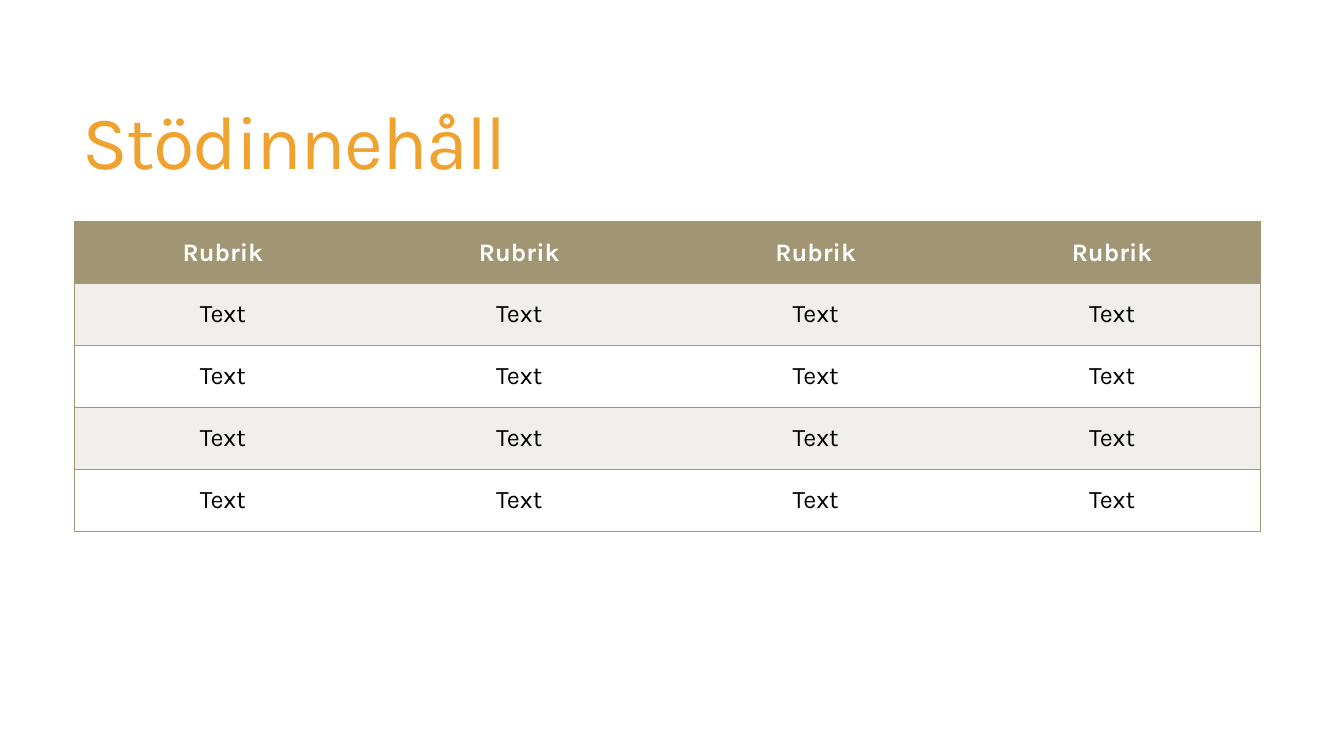
from dataclasses import dataclass

from lxml import etree
from pptx import Presentation
from pptx import util as u
from pptx.dml.color import RGBColor
from pptx.enum import text
from pptx.oxml import ns

ORANGE = RGBColor(0xF0, 0xA2, 0x2E)
KHAKI = RGBColor(0xA1, 0x95, 0x74)
PALE = RGBColor(0xF0, 0xEF, 0xEB)
WHITE = RGBColor(0xFF, 0xFF, 0xFF)
BLACK = RGBColor(0x00, 0x00, 0x00)
FONT = "Karla"
COLUMN_COUNT = 4


@dataclass(frozen=True)
class RowStyle:
    label: str
    fill: RGBColor
    color: RGBColor
    bold: bool = False


HEADING = RowStyle("Rubrik", KHAKI, WHITE, True)
SHADED = RowStyle("Text", PALE, BLACK)
PLAIN = RowStyle("Text", WHITE, BLACK)
ROWS = [HEADING, SHADED, PLAIN, SHADED, PLAIN]


def style_text(paragraph, size: float, color: RGBColor, bold: bool = False) -> None:
    for run in paragraph.runs:
        run.font.name = FONT
        run.font.size = u.Pt(size)
        run.font.color.rgb = color
        run.font.bold = bold


def add_border(cell, side: str, visible: bool) -> None:
    properties = cell._tc.get_or_add_tcPr()
    line = etree.SubElement(properties, ns.qn(f"a:ln{side}"), w=str(u.Pt(1)))
    if visible:
        fill = etree.SubElement(line, ns.qn("a:solidFill"))
        etree.SubElement(fill, ns.qn("a:srgbClr"), val=str(KHAKI))
    else:
        etree.SubElement(line, ns.qn("a:noFill"))


def fill_cell(cell, style: RowStyle, column: int) -> None:
    add_border(cell, "L", column == 0)
    add_border(cell, "R", column == COLUMN_COUNT - 1)
    add_border(cell, "T", True)
    add_border(cell, "B", True)
    cell.fill.solid()
    cell.fill.fore_color.rgb = style.fill
    cell.vertical_anchor = text.MSO_ANCHOR.MIDDLE
    cell.text_frame.text = style.label
    paragraph = cell.text_frame.paragraphs[0]
    paragraph.alignment = text.PP_ALIGN.CENTER
    style_text(paragraph, 18, style.color, style.bold)


def add_title(slide) -> None:
    title = slide.shapes.add_textbox(
        u.Inches(0.72), u.Inches(0.55), u.Inches(11.78), u.Inches(1.81)
    ).text_frame
    title.word_wrap = True
    title.vertical_anchor = text.MSO_ANCHOR.MIDDLE
    title.text = "Stödinnehåll"
    heading = title.paragraphs[0]
    heading.line_spacing = 0.85
    style_text(heading, 54, ORANGE)
    heading.runs[0].font._element.set("spc", "-120")


def add_content_table(slide) -> None:
    table = slide.shapes.add_table(
        len(ROWS), COLUMN_COUNT,
        u.Inches(0.74), u.Inches(2.2), u.Inches(11.76), u.Inches(3.07),
    ).table
    for row, style in enumerate(ROWS):
        for column in range(COLUMN_COUNT):
            fill_cell(table.cell(row, column), style, column)


def main() -> None:
    deck = Presentation()
    deck.slide_width = u.Inches(13.33)
    deck.slide_height = u.Inches(7.5)
    slide = deck.slides.add_slide(deck.slide_layouts[6])
    add_title(slide)
    add_content_table(slide)
    deck.save("out.pptx")


if __name__ == "__main__":
    main()
